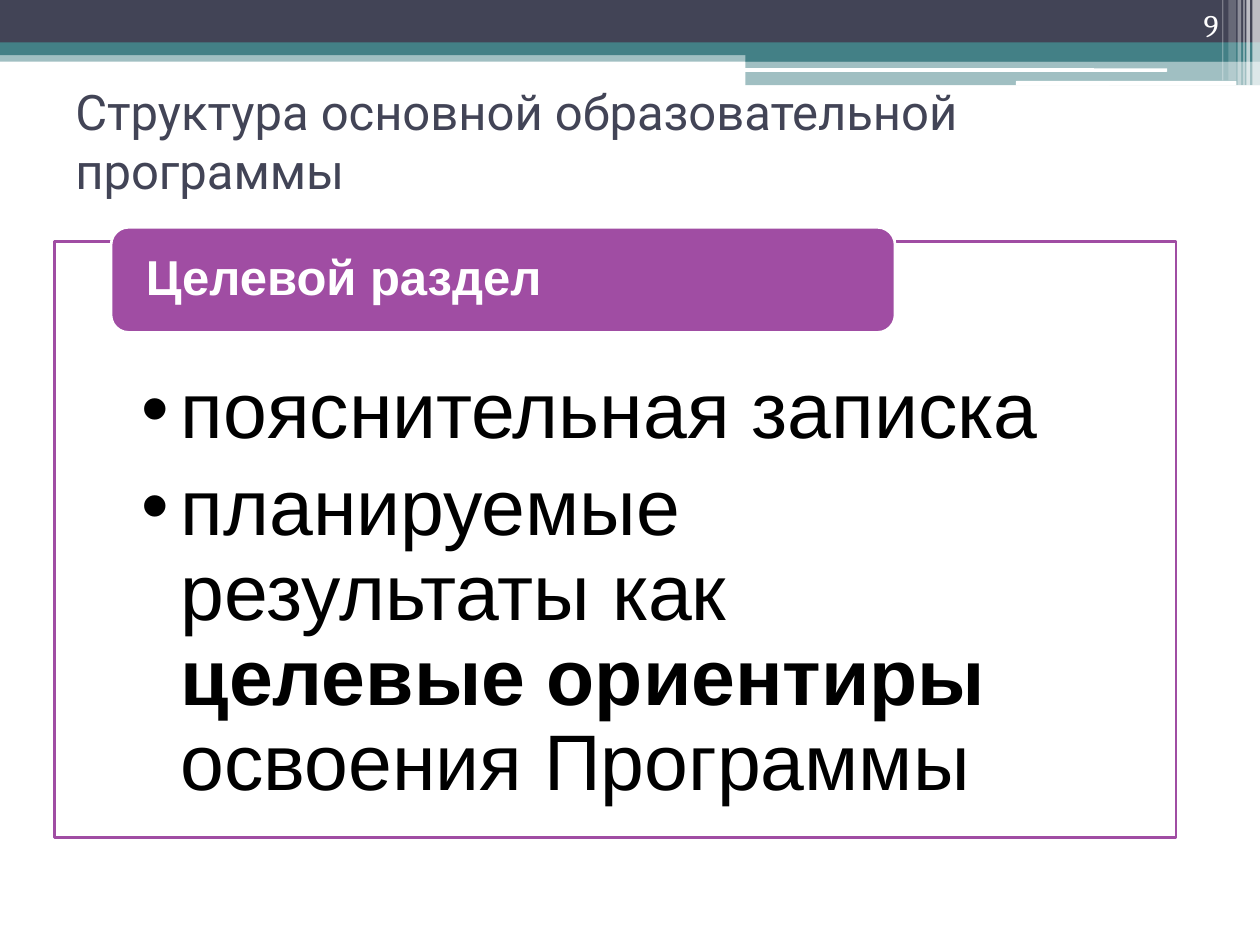
from dataclasses import dataclass

from lxml.etree import SubElement
from pptx import Presentation
from pptx.dml.color import RGBColor
from pptx.enum.shapes import MSO_SHAPE
from pptx.enum.text import MSO_ANCHOR, PP_ALIGN
from pptx.oxml.ns import qn
from pptx.util import Pt

HUES = {
    "navy": "424456",
    "teal": "438086",
    "white": "FFFFFF",
    "purple": "A04DA3",
    "black": "000000",
}


@dataclass
class Box:
    """Place and look of one shape."""

    left: float
    top: float
    width: float
    height: float
    fill: str = "white"
    alpha: int = 100
    kind: MSO_SHAPE = MSO_SHAPE.RECTANGLE
    line: str = ""

    def place(self) -> list:
        """Give the four lengths in points."""
        return [Pt(v) for v in (self.left, self.top, self.width, self.height)]


ROUND = MSO_SHAPE.ROUNDED_RECTANGLE
BANDS = [
    Box(0, 28.8, 720, 6.5, "teal", 50),
    Box(0, 0, 720, 24.5, "navy"),
    Box(0, 24.3, 720, 7.2, "teal"),
    Box(426, 28, 294, 7.2, "teal"),
    Box(426, 34.7, 294, 14, "teal", 50),
    Box(425.5, 39, 241.5, 2, kind=ROUND),
    Box(580.5, 46.3, 126, 2.6, kind=ROUND),
]
STRIPES = [
    Box(left, 0, width, high, alpha=alpha)
    for left, width, high, alpha in (
        (715.7, 4.3, 49, 65),
        (712.2, 2, 49, 65),
        (710.5, 0.7, 49, 60),
        (707.2, 2, 49, 40),
        (702, 4.3, 46, 20),
        (698.4, 0.7, 46, 30),
    )
]
PANEL = Box(31, 138.2, 641, 340.5, alpha=90, line="purple")
HEAD = Box(63.5, 129.9, 448, 60, "purple", kind=ROUND, line="white")
TITLE = Box(36, 37.5, 648, 85)
PAGE = Box(643.7, 0, 59.8, 28.8)


def shade(hue: str) -> RGBColor:
    """Look up a named colour."""
    return RGBColor.from_string(HUES[hue])


def apply(item, **looks) -> None:
    """Set each given format value."""
    for name, value in looks.items():
        setattr(item, name, value)


def draw(slide, box: Box):
    """Draw a preset shape."""
    shape = slide.shapes.add_shape(box.kind, *box.place())
    shape.shadow.inherit = False
    shape.fill.solid()
    shape.fill.fore_color.rgb = shade(box.fill)
    if box.alpha < 100:
        tint = shape.element.spPr.find(f"{qn('a:solidFill')}/{qn('a:srgbClr')}")
        SubElement(tint, qn("a:alpha"), val=str(box.alpha * 1000))
    if box.line:
        shape.line.color.rgb = shade(box.line)
        shape.line.width = Pt(1.5)
    else:
        shape.line.fill.background()
    return shape


def label(slide, box: Box):
    """Add a plain text box."""
    return slide.shapes.add_textbox(*box.place())


def setup(shape, anchor: MSO_ANCHOR, pads: tuple = (7.2, 3.6, 7.2, 3.6)):
    """Prepare and return a text frame."""
    frame = shape.text_frame
    sides = ("margin_left", "margin_top", "margin_right", "margin_bottom")
    apply(frame, word_wrap=True, vertical_anchor=anchor)
    apply(frame, **dict(zip(sides, map(Pt, pads))))
    return frame


def write(para, parts: list, size: float, face: str, hue: str, **looks) -> None:
    """Write text parts, each with its bold flag."""
    apply(para, **{"alignment": PP_ALIGN.LEFT, **looks})
    for text, bold in parts:
        run = para.add_run()
        run.text = text
        apply(run.font, size=Pt(size), name=face, bold=bold)
        run.font.color.rgb = shade(hue)


def bullet(para) -> None:
    """Give a paragraph a hanging bullet."""
    props = para._p.get_or_add_pPr()
    apply_ind = {"marL": Pt(22.5), "indent": Pt(-22.5)}
    for name, value in apply_ind.items():
        props.set(name, str(int(value)))
    SubElement(props, qn("a:buFont"), typeface="Arial")
    SubElement(props, qn("a:buChar"), char="•")


def main() -> None:
    """Build and save the slide."""
    deck = Presentation()
    apply(deck, slide_width=Pt(720), slide_height=Pt(540))
    slide = deck.slides.add_slide(deck.slide_layouts[6])
    for box in BANDS + STRIPES:
        draw(slide, box)

    title = setup(label(slide, TITLE), MSO_ANCHOR.MIDDLE)
    text = "Структура основной образовательной программы"
    write(title.paragraphs[0], [(text, False)], 28, "Roboto", "navy")
    page = setup(label(slide, PAGE), MSO_ANCHOR.BOTTOM)
    write(page.paragraphs[0], [("9", False)], 18, "Cambria", "white",
          alignment=PP_ALIGN.RIGHT)

    body = setup(draw(slide, PANEL), MSO_ANCHOR.TOP, (49.75, 73.5, 53, 25))
    points = [
        [("пояснительная записка", False)],
        [
            ("планируемые результаты как ", False),
            ("целевые ориентиры ", True),
            ("освоения Программы", False),
        ],
    ]
    for rank, parts in enumerate(points):
        para = body.add_paragraph() if rank else body.paragraphs[0]
        bullet(para)
        write(para, parts, 45, "Arial", "black",
              line_spacing=0.9, space_after=Pt(6.75))

    head = setup(draw(slide, HEAD), MSO_ANCHOR.MIDDLE, (17, 0, 17, 0))
    write(head.paragraphs[0], [("Целевой раздел", True)], 28, "Arial", "white",
          line_spacing=0.9)
    deck.save("out.pptx")


if __name__ == "__main__":
    main()
